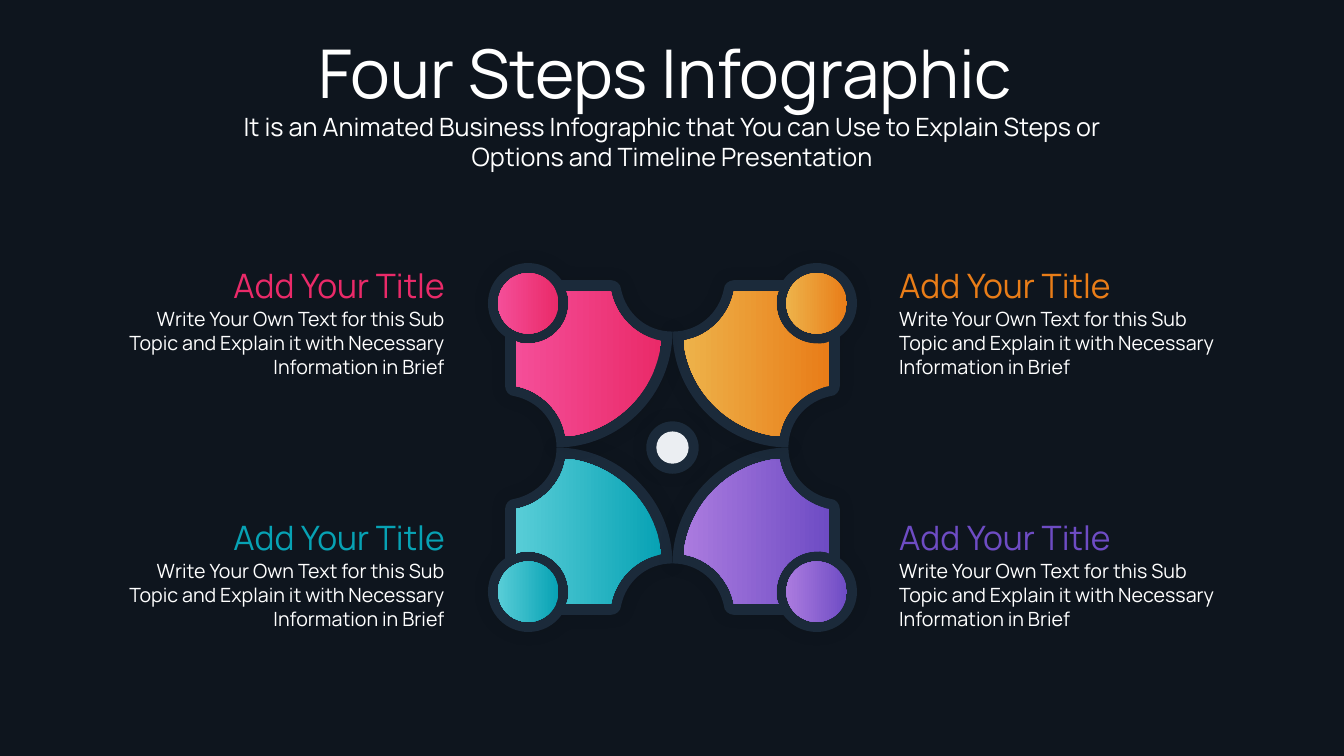
import dataclasses

import lxml.etree
import pptx
import pptx.dml.color
import pptx.dml.fill
import pptx.enum.text
import pptx.oxml.ns
import pptx.shapes.autoshape
import pptx.shapes.base
import pptx.shapes.group
import pptx.slide
import pptx.util
import pptx.enum.shapes

EMU_PER_PX = 9144
FONT = "Manrope"
WHITE, NAVY, BACKGROUND, PEARL = "FFFFFF", "1B2A3A", "0E151E", "EBEEF2"
CENTER_X, CENTER_Y = 667, 444
DOT_OFFSET, DOT_RADIUS = 143, 30
LEFT_EDGE, RIGHT_EDGE = 451, 882
TITLE_WIDTH, BODY_WIDTH = 271, 363

Point = tuple[int, int]
Segment = tuple[Point, ...]
Align = pptx.enum.text.PP_ALIGN
qn = pptx.oxml.ns.qn

RIM_START: Point = (0, 115)
RIM: list[Segment] = [
    ((26, 115), (46, 133), (51, 157)),
    ((51, 162), (56, 166), (61, 166)),
    ((110, 166),),
    ((117, 176), (129, 183), (143, 183)),
    ((165, 183), (183, 165), (183, 143)),
    ((183, 129), (176, 117), (166, 110)),
    ((166, 61),),
    ((166, 56), (162, 51), (157, 51)),
    ((133, 46), (115, 26), (115, 0)),
    ((52, 0), (0, 52), (0, 115)),
]
PETAL_START: Point = (106, 11)
PETAL: list[Segment] = [
    ((110, 36), (130, 56), (155, 61)),
    ((155, 105),),
    ((151, 103), (147, 103), (143, 103)),
    ((121, 103), (103, 121), (103, 143)),
    ((103, 147), (103, 151), (105, 155)),
    ((61, 155),),
    ((56, 130), (36, 110), (11, 106)),
    ((16, 56), (56, 16), (106, 11)),
]
BODY = [
    "Write Your Own Text for this Sub",
    "Topic and Explain it with Necessary",
    "Information in Brief",
]


@dataclasses.dataclass(frozen=True)
class Step:
    title: str
    side: int
    level: int
    title_top: int
    dark: str
    light: str


STEPS = [
    Step("Add Your Title", -1, 1, 508, "07A2B4", "58CDD7"),
    Step("Add Your Title", 1, 1, 508, "6E4CC4", "AB7BDF"),
    Step("Add Your Title", 1, -1, 258, "E97D18", "EDB24A"),
    Step("Add Your Title", -1, -1, 258, "EA2A69", "F44E98"),
]


def px(n: int) -> int:
    return pptx.util.Emu(n * EMU_PER_PX)


def rgb(color: str) -> pptx.dml.color.RGBColor:
    return pptx.dml.color.RGBColor.from_string(color)


def paint(fill: pptx.dml.fill.FillFormat, colors: list[str]) -> None:
    if len(colors) == 1:
        fill.solid()
        fill.fore_color.rgb = rgb(colors[0])
        return
    fill.gradient()
    fill.gradient_angle = 180
    for stop, color in zip(fill.gradient_stops, colors):
        stop.color.rgb = rgb(color)


def style(s: pptx.shapes.autoshape.Shape, colors: list[str], glow: bool = False) -> None:
    paint(s.fill, colors)
    s.line.fill.background()
    s.shadow.inherit = False
    if glow:
        effects = s._element.spPr.find(qn("a:effectLst"))
        shadow = lxml.etree.SubElement(
            effects, qn("a:outerShdw"), blurRad=str(pptx.util.Pt(12)), algn="ctr", rotWithShape="0"
        )
        black = lxml.etree.SubElement(shadow, qn("a:srgbClr"), val="000000")
        lxml.etree.SubElement(black, qn("a:alpha"), val="10000")


def add_outline(
    group: pptx.shapes.group.GroupShape, step: Step, start: Point, segments: list[Segment]
) -> pptx.shapes.autoshape.Shape:
    def place(point: Point) -> Point:
        return CENTER_X + step.side * point[0], CENTER_Y + step.level * point[1]

    builder = group.shapes.build_freeform(*place(start), scale=EMU_PER_PX)
    builder.add_line_segments([place(point) for segment in segments for point in segment], close=True)
    s = builder.convert_to_shape()
    lines = iter(s._element.spPr.findall(".//" + qn("a:lnTo")))
    for segment in segments:
        first, *others = [next(lines) for _ in segment]
        if others:
            first.tag = qn("a:cubicBezTo")
        for line in others:
            first.append(line[0])
            line.getparent().remove(line)
    return s


def add_disc(
    group: pptx.shapes.group.GroupShape, x: int, y: int, radius: int
) -> pptx.shapes.autoshape.Shape:
    return group.shapes.add_shape(
        pptx.enum.shapes.MSO_SHAPE.OVAL, px(x - radius), px(y - radius), px(2 * radius), px(2 * radius)
    )


def add_text(
    slide: pptx.slide.Slide,
    box: tuple[int, int, int, int],
    lines: list[str],
    size: int,
    colors: list[str],
    align: Align,
    wrap: bool = False,
) -> None:
    tf = slide.shapes.add_textbox(*map(px, box)).text_frame
    tf.word_wrap = wrap
    tf.auto_size = pptx.enum.text.MSO_AUTO_SIZE.SHAPE_TO_FIT_TEXT
    for i, line in enumerate(lines):
        p = tf.add_paragraph() if i else tf.paragraphs[0]
        p.alignment = align
        r = p.add_run()
        r.text = line
        r.font.size = pptx.util.Pt(size)
        r.font.name = FONT
        paint(r.font.fill, colors)


def add_step(group: pptx.shapes.group.GroupShape, step: Step) -> None:
    gradient = [step.dark, step.light]
    style(add_outline(group, step, RIM_START, RIM), [NAVY], glow=True)
    style(add_outline(group, step, PETAL_START, PETAL), gradient)
    x, y = CENTER_X + step.side * DOT_OFFSET, CENTER_Y + step.level * DOT_OFFSET
    style(add_disc(group, x, y, DOT_RADIUS), gradient)


def add_caption(slide: pptx.slide.Slide, step: Step) -> None:
    on_left = step.side < 0
    align = Align.RIGHT if on_left else Align.LEFT
    title_x = LEFT_EDGE - TITLE_WIDTH if on_left else RIGHT_EDGE
    body_x = LEFT_EDGE - BODY_WIDTH if on_left else RIGHT_EDGE
    add_text(slide, (title_x, step.title_top, TITLE_WIDTH, 50), [step.title], 24, [step.dark, step.light], align)
    add_text(slide, (body_x, step.title_top + 42, BODY_WIDTH, 81), BODY, 14, [WHITE], align)


def main() -> None:
    prs = pptx.Presentation()
    prs.slide_width, prs.slide_height = pptx.util.Inches(13.33), pptx.util.Inches(7.5)
    slide = prs.slides.add_slide(prs.slide_layouts[6])
    paint(slide.background.fill, [BACKGROUND])

    group = slide.shapes.add_group_shape()
    for step in STEPS:
        add_step(group, step)
    style(add_disc(group, CENTER_X, CENTER_Y, 26), [NAVY], glow=True)
    style(add_disc(group, CENTER_X, CENTER_Y, 16), [PEARL])

    add_text(slide, (187, 26, 959, 91), ["Four Steps Infographic "], 48, [WHITE], Align.CENTER, wrap=True)
    subtitle = (
        "It is an Animated Business Infographic that You can Use to Explain Steps or "
        "Options and Timeline Presentation"
    )
    add_text(slide, (187, 105, 959, 71), [subtitle], 18, [WHITE], Align.CENTER, wrap=True)
    for step in STEPS:
        add_caption(slide, step)
    prs.save("out.pptx")


if __name__ == "__main__":
    main()
